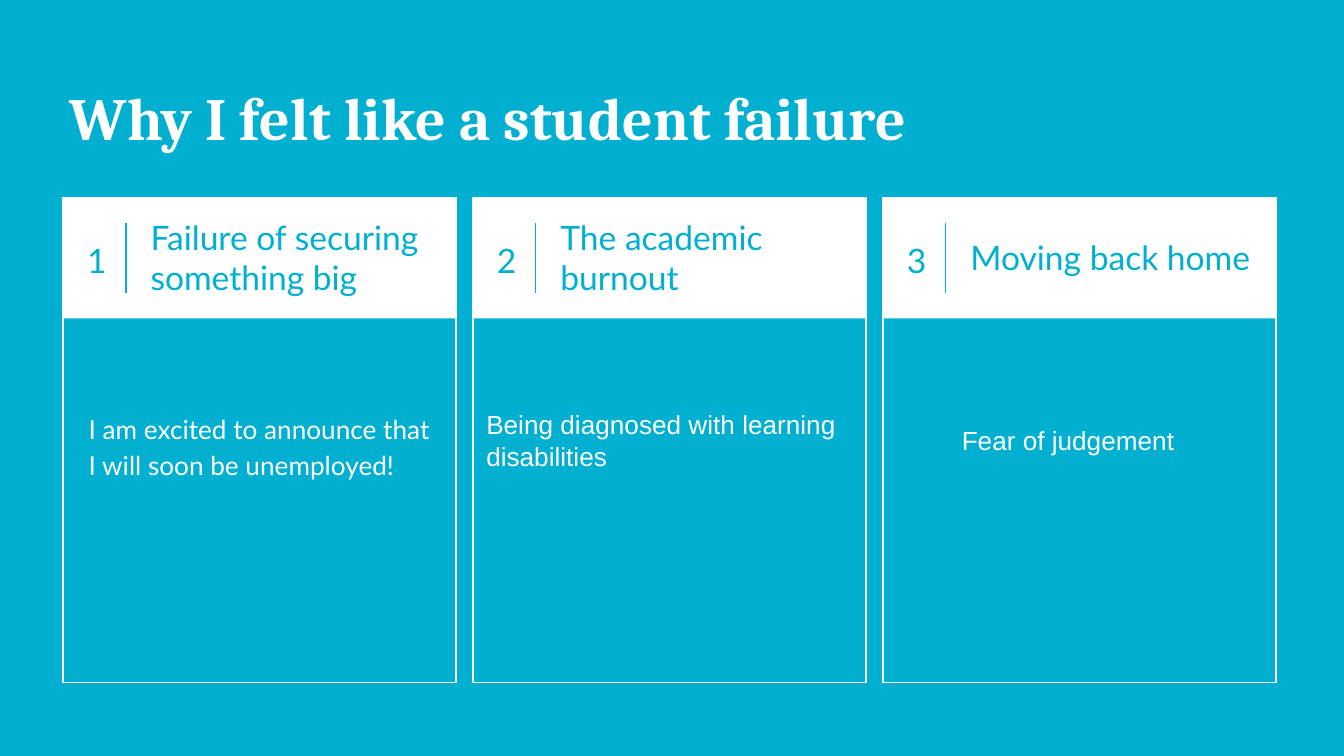
import pptx
import pptx.util
import pptx.dml.color
import pptx.enum.shapes
import pptx.enum.text
import pptx.oxml.ns
import lxml.etree

Pt = pptx.util.Pt
RGB = pptx.dml.color.RGBColor
Anchor = pptx.enum.text.MSO_ANCHOR
Align = pptx.enum.text.PP_ALIGN
TEAL = RGB(0x01, 0xAF, 0xD1)
WHITE = RGB(0xFF, 0xFF, 0xFF)

LEFT, TOP, STEP = 33.84, 105.84, 219.6
WIDTH, HEAD, TALL = 210.5, 64.8, 260


def place(box, left, top, width, height):
    """Move a shape and bring it to the front."""
    box.left, box.top = Pt(left), Pt(top)
    box.width, box.height = Pt(width), Pt(height)
    box.element.getparent().append(box.element)


def write(box, text, size, font, color, bold=False, anchor=Anchor.MIDDLE,
          align=Align.LEFT, space=1.0):
    """Fill a shape with one plain paragraph."""
    frame = box.text_frame
    frame.text = text
    frame.word_wrap = True
    frame.auto_size = pptx.enum.text.MSO_AUTO_SIZE.NONE
    frame.vertical_anchor = anchor
    frame.margin_left = frame.margin_right = Pt(7.2)
    frame.margin_top = frame.margin_bottom = Pt(7.2)
    para = frame.paragraphs[0]
    para.alignment = align
    para.line_spacing = space
    para.space_before = Pt(0)
    props = para._p.get_or_add_pPr()
    props.set("marL", "0")
    props.set("indent", "0")
    lxml.etree.SubElement(props, pptx.oxml.ns.qn("a:buNone"))
    run = para.runs[0].font
    run.size, run.name, run.bold = Pt(size), font, bold
    run.color.rgb = color


# Slide with a title and four body placeholders
deck = pptx.Presentation()
deck.slide_width, deck.slide_height = Pt(720), Pt(405)
slide = deck.slides.add_slide(deck.slide_layouts.get_by_name("Comparison"))
slide.background.fill.solid()
slide.background.fill.fore_color.rgb = TEAL
title, *heads, body = list(slide.placeholders)

# Title
place(title, 30.24, 36, 658.8, 54)
write(title, "Why I felt like a student failure", 32, "Cambria", WHITE,
      bold=True, anchor=Anchor.TOP)

# Three cards: heading, text inside the frame, extra indent of that text
cards = [
    ("Failure of securing something big", "", 0),
    ("The academic burnout", "Being diagnosed with learning disabilities", 0),
    ("Moving back home", "Fear of judgement", 35),
]
for i, (label, note, indent) in enumerate(cards):
    left = LEFT + i * STEP

    # Frame and white header band
    frame, band = [
        slide.shapes.add_shape(
            pptx.enum.shapes.MSO_SHAPE.RECTANGLE,
            Pt(left), Pt(TOP), Pt(WIDTH), Pt(height))
        for height in (TALL, HEAD)]
    frame.shadow.inherit = band.shadow.inherit = False
    frame.fill.background()
    frame.line.color.rgb = WHITE
    frame.line.width = Pt(0.75)
    band.fill.solid()
    band.fill.fore_color.rgb = WHITE
    band.line.fill.background()
    if note:
        write(frame, note, 14, "Arial", WHITE)
        frame.text_frame.margin_left = Pt(7.2 + indent)

    # Number, divider and heading
    count = slide.shapes.add_textbox(
        Pt(left + 4.3), Pt(TOP - 0.7), Pt(27.4), Pt(HEAD))
    write(count, str(i + 1), 18, "Lato", TEAL, align=Align.CENTER, space=1.15)
    rule = slide.shapes.add_connector(
        pptx.enum.shapes.MSO_CONNECTOR.STRAIGHT,
        Pt(left + 33.6), Pt(119.5), Pt(left + 33.6), Pt(157))
    rule.line.color.rgb = TEAL
    rule.line.width = Pt(0.75)
    lxml.etree.SubElement(
        rule.element.spPr, pptx.oxml.ns.qn("a:effectLst"))
    place(heads[i], left + 39.6, TOP - 0.4, 167, HEAD)
    write(heads[i], label, 18, "Lato", TEAL)

# Text of the first card
place(body, 40.32, 212, 199.4, 153)
write(body, "I am excited to announce that I will soon be unemployed!",
      14, "Lato", WHITE, anchor=Anchor.TOP, space=1.15)

deck.save("out.pptx")
